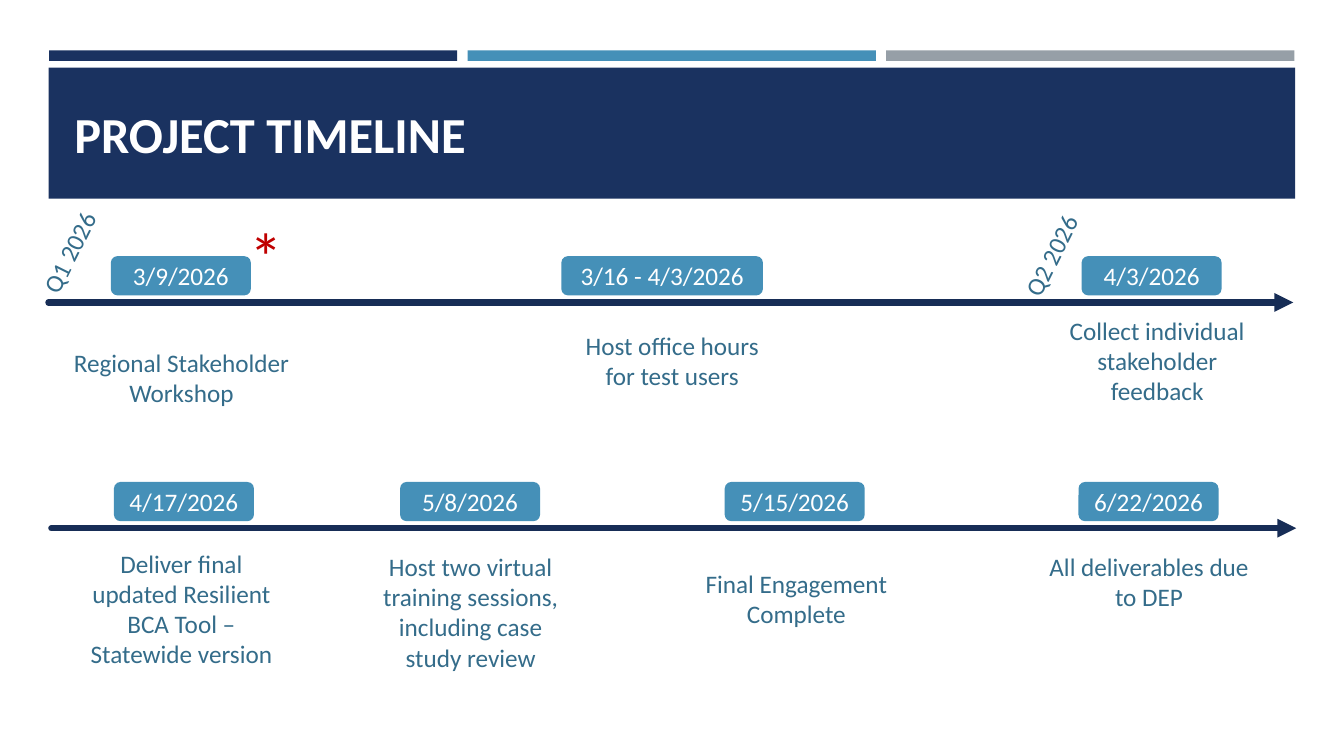
from dataclasses import dataclass

from lxml.etree import SubElement
from pptx import Presentation
from pptx.dml.color import RGBColor
from pptx.enum.shapes import MSO_CONNECTOR, MSO_SHAPE
from pptx.enum.text import MSO_ANCHOR, PP_ALIGN
from pptx.oxml.ns import qn
from pptx.util import Pt


@dataclass(frozen=True)
class Theme:
    """Colours, type sizes and font of the slide."""
    navy: str = "1A3260"
    axis: str = "172D56"
    blue: str = "4590B8"
    grey: str = "969FA7"
    caption: str = "346C8A"
    red: str = "C00000"
    white: str = "FFFFFF"
    font: str = "Calibri"
    title_size: int = 36
    body_size: int = 18
    mark_size: int = 48


THEME = Theme()
RECT, ROUNDED = MSO_SHAPE.RECTANGLE, MSO_SHAPE.ROUNDED_RECTANGLE
PILL_HEIGHT, PILL_RISE, PILL_WIDTH = 28, 33, 100

STRIPES = [THEME.navy, THEME.blue, THEME.grey]
QUARTERS = [("Q1 2026", -0.7, 166.3), ("Q2 2026", 700.6, 168.5)]
TIMELINES = [
    (34.6, 216, [
        ("3/9/2026", 79.2, PILL_WIDTH,
         "Regional Stakeholder Workshop", (43.9, 244.1, 171.4, 51.1), RECT),
        ("3/16 - 4/3/2026", 401, 144,
         "Host office hours for test users", (401, 231.8, 158.4, 51.1), RECT),
        ("4/3/2026", 772.6, PILL_WIDTH,
         "Collect individual stakeholder feedback", (747.4, 231.8, 158.4, 51.1), RECT),
    ]),
    (36.7, 377.3, [
        ("4/17/2026", 81.4, PILL_WIDTH,
         "Deliver final updated Resilient BCA Tool – Statewide version",
         (50.4, 388.1, 158.4, 92.9), ROUNDED),
        ("5/8/2026", 285.8, PILL_WIDTH,
         "Host two virtual training sessions, including case study review",
         (257, 397.4, 158.4, 79.2), RECT),
        ("5/15/2026", 517.7, PILL_WIDTH,
         "Final Engagement Complete", (483.1, 388.1, 171.4, 79.2), RECT),
        ("6/22/2026", 770.4, PILL_WIDTH,
         "All deliverables due to DEP", (741.6, 389.5, 158.4, 51.1), RECT),
    ]),
]


def add_block(slide, box, fill=None, outline=RECT):
    """Add a borderless shape, left unfilled when no colour is given."""
    block = slide.shapes.add_shape(outline, *map(Pt, box))
    block.shadow.inherit = False
    block.line.fill.background()
    if fill:
        block.fill.solid()
        block.fill.fore_color.rgb = RGBColor.from_string(fill)
    else:
        block.fill.background()
    return block


def write(block, text, color, size=THEME.body_size, align=PP_ALIGN.CENTER,
          anchor=MSO_ANCHOR.MIDDLE, bold=False):
    """Put one formatted run of text in a shape."""
    frame = block.text_frame
    frame.word_wrap = True
    frame.vertical_anchor = anchor
    paragraph = frame.paragraphs[0]
    paragraph.alignment = align
    run = paragraph.add_run()
    run.text = text
    run.font.name = THEME.font
    run.font.size = Pt(size)
    run.font.bold = bold
    run.font.color.rgb = RGBColor.from_string(color)


def add_axis(slide, left, height):
    """Draw one timeline arrow with a round start."""
    axis = slide.shapes.add_connector(
        MSO_CONNECTOR.STRAIGHT, Pt(left), Pt(height), Pt(left + 889.2), Pt(height))
    axis.line.width = Pt(4.5)
    axis.line.color.rgb = RGBColor.from_string(THEME.axis)
    stroke = axis.line._get_or_add_ln()
    stroke.set("cap", "rnd")
    SubElement(stroke, qn("a:tailEnd"), type="triangle")
    SubElement(axis._element.spPr, qn("a:effectLst"))


def add_header(slide):
    """Build the three stripes and the title banner."""
    for index, color in enumerate(STRIPES):
        add_block(slide, (35 + index * 299, 36, 291.6, 7.5), color)
    add_block(slide, (34.8, 48.4, 890.4, 93.6), THEME.navy)
    title = slide.shapes.add_textbox(Pt(46), Pt(55.5), Pt(868.3), Pt(80))
    write(title, "PROJECT TIMELINE", THEME.white, THEME.title_size, PP_ALIGN.LEFT, bold=True)


def add_timeline(slide, left, height, milestones):
    """Build an axis with its dated pills and captions."""
    add_axis(slide, left, height)
    for date, pill_left, pill_width, caption, caption_box, outline in milestones:
        pill_box = (pill_left, height - PILL_RISE, pill_width, PILL_HEIGHT)
        write(add_block(slide, pill_box, THEME.blue, ROUNDED), date, THEME.white)
        write(add_block(slide, caption_box, outline=outline), caption, THEME.caption)


def add_quarter(slide, label, left, top):
    """Add a slanted quarter label."""
    quarter = add_block(slide, (left, top, PILL_WIDTH, PILL_HEIGHT), outline=ROUNDED)
    quarter.rotation = 296.5
    write(quarter, label, THEME.caption)


def main():
    """Build and save the project timeline slide."""
    deck = Presentation()
    deck.slide_width, deck.slide_height = Pt(960), Pt(540)
    slide = deck.slides.add_slide(deck.slide_layouts[6])
    add_header(slide)
    for timeline in TIMELINES:
        add_timeline(slide, *timeline)
    for quarter in QUARTERS:
        add_quarter(slide, *quarter)
    asterisk = slide.shapes.add_textbox(Pt(171.4), Pt(149.8), Pt(69.8), Pt(65.5))
    write(asterisk, "*", THEME.red, THEME.mark_size, PP_ALIGN.LEFT, MSO_ANCHOR.TOP)
    deck.save("out.pptx")


if __name__ == "__main__":
    main()
